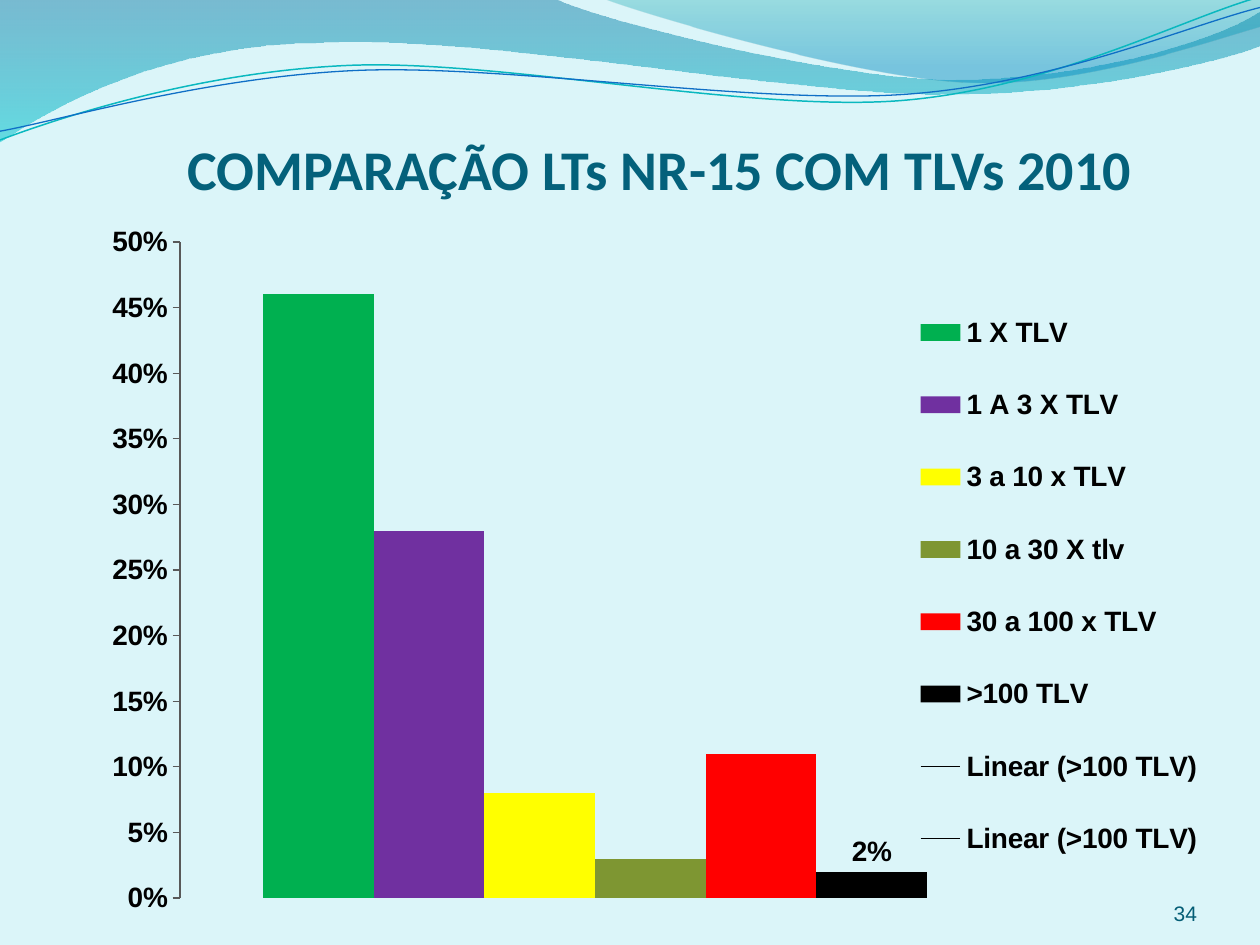
from lxml import etree
from pptx import Presentation
from pptx.chart.data import CategoryChartData
from pptx.dml.color import RGBColor
from pptx.enum.chart import XL_CHART_TYPE as ChartType
from pptx.enum.chart import XL_LABEL_POSITION as LabelPosition
from pptx.enum.chart import XL_LEGEND_POSITION as LegendPosition
from pptx.enum.chart import XL_TICK_MARK as TickMark
from pptx.enum.text import MSO_ANCHOR as Anchor
from pptx.enum.text import MSO_AUTO_SIZE as AutoSize
from pptx.enum.text import PP_ALIGN as Align
from pptx.oxml import parse_xml
from pptx.oxml.ns import nsdecls, qn
from pptx.util import Pt

COLORS = {
    "background": "DBF5F9", "title": "04617B", "number": "045D75",
    "text": "000000", "axis": "595959",
    "teal line": "0AB8BF", "blue line": "0F6FC6",
}

# Waves in points: a pair is a straight step, six numbers are a Bezier step.
# Gradient stops are (position %, colour, opacity %).
WAVES = [
    ([(0, -0.7), (317, -0.7),
      (343, 12, 478, 45.4, 546, 45.4), (614, 45.4, 690, 26, 720, 6.5),
      (720.7, 26), (708, 31.7, 626, 54.7, 537, 54),
      (448, 54, 275, 20.2, 185, 24.5), (93, 25.2, 33, 60, -0.7, 81.4)],
     [(0, "0074A1", 45), (100, "00C6CF", 55)]),
    ([(345, -0.7), (366.5, 8, 491, 44.6, 553.7, 46.8),
      (616.3, 49.7, 692, 23, 720, 15.1), (720, 0)],
     [(0, "00A1A9", 30), (80, "008BBF", 45)]),
]
WAVE_LINES = [
    ([(0, 80), (34.6, 67, 113.8, 41, 199.4, 37.4),
      (284.4, 33.8, 427, 64, 513.4, 57.6),
      (599.8, 51, 675.4, 10.8, 718.6, -1.4)], "teal line", 0.85),
    ([(0, 75), (33.8, 69, 118, 44, 203.8, 40.3),
      (290, 36.7, 429.8, 59.8, 516.2, 54),
      (602, 48.2, 677.5, 15, 720, 4.3)], "blue line", 0.75),
]
SERIES = [
    ("1 X TLV", 0.46, "00B050"), ("1 A 3 X TLV", 0.28, "7030A0"),
    ("3 a 10 x TLV", 0.08, "FFFF00"), ("10 a 30 X tlv", 0.03, "7E9632"),
    ("30 a 100 x TLV", 0.11, "FF0000"), (">100 TLV", 0.02, "000000"),
]


def rgb(name):
    return RGBColor.from_string(COLORS.get(name, name))


def style_font(font, name, size, color, bold=False):
    font.name, font.size, font.bold = name, Pt(size), bold
    font.color.rgb = rgb(color)


def add_outline(page, steps, close):
    """Add a freeform through the ends of the steps, then bend its curves."""
    ends = [step[-2:] for step in steps]
    builder = page.shapes.build_freeform(*ends[0], scale=Pt(1))
    builder.add_line_segments(ends[1:], close=close)
    shape = builder.convert_to_shape()
    shape.shadow.inherit = False
    left, top = (min(values) for values in zip(*ends))
    right, bottom = (max(values) for values in zip(*ends))
    shape.left, shape.top = Pt(left), Pt(top)
    shape.width, shape.height = Pt(right - left), Pt(bottom - top)

    outline = shape.element.spPr.find(f".//{qn('a:path')}")
    outline.set("w", str(shape.width))
    outline.set("h", str(shape.height))
    segments = [part for part in outline if part.tag != qn("a:close")]
    for segment, step in zip(segments, steps):
        for point in list(segment):
            segment.remove(point)
        if len(step) == 6:
            segment.tag = qn("a:cubicBezTo")
        for x, y in zip(step[::2], step[1::2]):
            etree.SubElement(segment, qn("a:pt"),
                             x=str(Pt(x - left)), y=str(Pt(y - top)))
    return shape


def add_waves(page):
    for steps, stops in WAVES:
        wave = add_outline(page, steps, close=True)
        wave.line.fill.background()
        stop_xml = "".join(
            f'<a:gs pos="{pos * 1000}"><a:srgbClr val="{color}">'
            f'<a:alpha val="{opacity * 1000}"/></a:srgbClr></a:gs>'
            for pos, color, opacity in stops)
        gradient = parse_xml(
            f'<a:gradFill {nsdecls("a")}><a:gsLst>{stop_xml}</a:gsLst>'
            '<a:lin ang="5400000" scaled="0"/></a:gradFill>')
        wave.element.spPr.find(qn("a:custGeom")).addnext(gradient)
    for steps, color, width in WAVE_LINES:
        line = add_outline(page, steps, close=False)
        line.fill.background()
        line.line.color.rgb = rgb(color)
        line.line.width = Pt(width)


def place_title(page, left, top, width, height):
    title = page.shapes.title
    title.left, title.top = Pt(left), Pt(top)
    title.width, title.height = Pt(width), Pt(height)
    frame = title.text_frame
    frame.auto_size, frame.vertical_anchor = AutoSize.NONE, Anchor.TOP
    frame.margin_left, frame.margin_right = Pt(41), Pt(7)
    frame.margin_top, frame.margin_bottom = Pt(21.3), 0
    para = frame.paragraphs[0]
    para.alignment = Align.CENTER
    span = para.add_run()
    span.text = "COMPARAÇÃO LTs NR-15 COM TLVs 2010"
    style_font(span.font, "Calibri", 32, "title", bold=True)


def chart_layout(x, y, width, height, inner=False):
    """Build a manual layout from percentages of the chart area."""
    items = [("layoutTarget", "inner")] if inner else []
    items += [("xMode", "edge"), ("yMode", "edge")]
    items += [(tag, value / 100) for tag, value in
              zip("xywh", (x, y, width, height))]
    layout = parse_xml(f'<c:layout {nsdecls("c")}><c:manualLayout/></c:layout>')
    for tag, value in items:
        etree.SubElement(layout[0], qn(f"c:{tag}")).set("val", str(value))
    return layout


def add_trend_line(series):
    trend = parse_xml(
        f'<c:trendline {nsdecls("c", "a")}><c:spPr><a:ln w="3175"><a:solidFill>'
        f'<a:srgbClr val="{COLORS["text"]}"/></a:solidFill></a:ln></c:spPr>'
        '<c:trendlineType val="linear"/><c:dispRSqr val="0"/>'
        '<c:dispEq val="0"/></c:trendline>')
    series._element.find(qn("c:cat")).addprevious(trend)


def add_limits_chart(page, left, top, width, height):
    data = CategoryChartData(number_format="0%")
    data.categories = ["1"]
    for name, value, _ in SERIES:
        data.add_series(name, [value])
    chart = page.shapes.add_chart(ChartType.COLUMN_CLUSTERED, Pt(left), Pt(top),
                                  Pt(width), Pt(height), data).chart
    style_font(chart.font, "Arial", 16, "text", bold=True)
    chart.has_title = False

    plot = chart.plots[0]
    plot.gap_width, plot.overlap, plot.vary_by_categories = 150, 0, False
    for series, (_, _, color) in zip(plot.series, SERIES):
        series.format.fill.solid()
        series.format.fill.fore_color.rgb = rgb(color)
    last = plot.series[-1]
    labels = last.data_labels
    labels.show_value, labels.position = True, LabelPosition.OUTSIDE_END
    labels.number_format, labels.number_format_is_linked = "0%", False
    for _ in range(2):
        add_trend_line(last)

    chart.category_axis.visible = False
    axis = chart.value_axis
    axis.has_major_gridlines = False
    axis.minimum_scale, axis.maximum_scale, axis.major_unit = 0, 0.5, 0.05
    axis.major_tick_mark = TickMark.OUTSIDE
    axis.tick_labels.number_format = "0%"
    axis.tick_labels.number_format_is_linked = False
    axis.format.line.color.rgb = rgb("axis")

    chart.has_legend = True
    legend = chart.legend
    legend.position, legend.include_in_layout = LegendPosition.RIGHT, False
    areas = [(legend._element, 1, chart_layout(70.4, 8.5, 25.4, 88)),
             (chart._chartSpace.chart.plotArea, 0,
              chart_layout(9.2, 3.8, 69.8, 93, inner=True))]
    for area, index, layout in areas:
        for old in area.findall(qn("c:layout")):
            area.remove(old)
        area.insert(index, layout)


def add_page_number(page, left, top, width, height):
    box = page.shapes.add_textbox(Pt(left), Pt(top), Pt(width), Pt(height))
    frame = box.text_frame
    frame.word_wrap, frame.vertical_anchor = True, Anchor.BOTTOM
    frame.margin_left = frame.margin_right = 0
    frame.margin_top = frame.margin_bottom = 0
    para = frame.paragraphs[0]
    para.alignment = Align.RIGHT
    span = para.add_run()
    span.text = "34"
    style_font(span.font, "Arial", 12, "number")


def main():
    deck = Presentation()
    deck.slide_width, deck.slide_height = Pt(720), Pt(540)
    page = deck.slides.add_slide(deck.slide_layouts[5])
    page.background.fill.solid()
    page.background.fill.fore_color.rgb = rgb("background")
    add_waves(page)
    place_title(page, 36, 55.5, 648, 60)
    add_limits_chart(page, 40.3, 123, 679.7, 403.2)
    add_page_number(page, 624, 500.5, 60, 28.75)
    deck.save("out.pptx")


if __name__ == "__main__":
    main()
